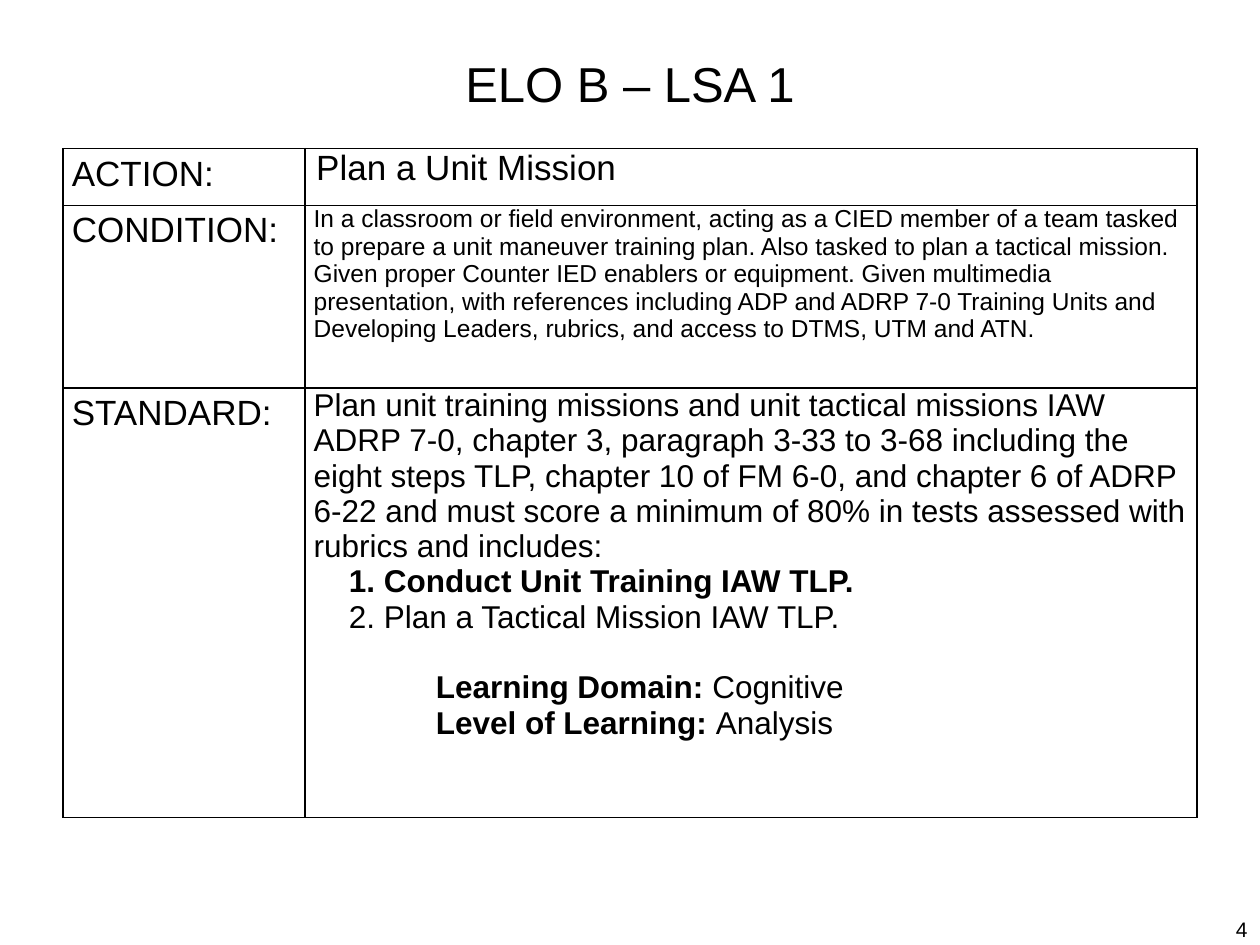
import pptx
import pptx.dml.color
import pptx.enum.text
import pptx.oxml
import pptx.oxml.ns
import pptx.util

Inches = pptx.util.Inches
Pt = pptx.util.Pt
ALIGN = pptx.enum.text.PP_ALIGN
MIDDLE = pptx.enum.text.MSO_ANCHOR.MIDDLE
BLACK = pptx.dml.color.RGBColor(0, 0, 0)
EDGE = (
    '<a:{} {} w="12700"><a:solidFill><a:srgbClr val="{}"/></a:solidFill></a:{}>'
)


def put(item, form):
    for key, value in form.items():
        setattr(item, key, value)


def write(para, runs, size, indent=0):
    if indent:
        para._p.get_or_add_pPr().set("marL", str(Inches(indent)))
    for text, bold in runs:
        run = para.add_run()
        run.text = text
        put(run.font, {"name": "Arial", "size": Pt(size), "bold": bold})
        run.font.color.rgb = BLACK


deck = pptx.Presentation()
put(deck, {"slide_width": Inches(10), "slide_height": Inches(7.5)})
slide = deck.slides.add_slide(deck.slide_layouts[5])

title = slide.shapes.title
put(title, {"left": Inches(0.5), "top": Inches(0.3),
            "width": Inches(9), "height": Inches(0.72)})
title.text_frame.vertical_anchor = MIDDLE
head = title.text_frame.paragraphs[0]
head.alignment = ALIGN.CENTER
write(head, [("ELO B – LSA 1", False)], 28)

page = slide.shapes.add_textbox(
    Inches(7.67), Inches(7.25), Inches(2.33), Inches(0.25)).text_frame
put(page, {"word_wrap": True, "vertical_anchor": MIDDLE})
page.paragraphs[0].alignment = ALIGN.RIGHT
write(page.paragraphs[0], [("4", False)], 12)

condition = (
    "In a classroom or field environment, acting as a CIED member of a team "
    "tasked to prepare a unit maneuver training plan. Also tasked to plan a "
    "tactical mission. Given proper Counter IED enablers or equipment. Given "
    "multimedia presentation, with references including ADP and ADRP 7-0 "
    "Training Units and Developing Leaders, rubrics, and access to DTMS, UTM "
    "and ATN."
)
standard = (
    "Plan unit training missions and unit tactical missions IAW ADRP 7-0, "
    "chapter 3, paragraph 3-33 to 3-68 including the eight steps TLP, chapter "
    "10 of FM 6-0, and chapter 6 of ADRP 6-22 and must score a minimum of 80% "
    "in tests assessed with rubrics and includes:"
)
rows = [
    ("ACTION:", 0.45, 20, [(0.02, 0, [("Plan a Unit Mission", False)])]),
    ("CONDITION:", 1.45, 14, [(0, 0, [(condition, False)])]),
    ("STANDARD:", 3.41, 18, [
        (0, 0, [(standard, False)]),
        (0.28, 0, [("1. Conduct Unit Training IAW TLP.", True)]),
        (0.28, 0, [("2. Plan a Tactical Mission IAW TLP.", False)]),
        (0.97, 20.2, [("Learning Domain: ", True), ("Cognitive", False)]),
        (0.97, 0, [("Level of Learning: ", True), ("Analysis", False)]),
    ]),
]

table = slide.shapes.add_table(
    len(rows), 2, Inches(0.5), Inches(1.18), Inches(9), Inches(5.31)).table
put(table, {"first_row": False, "horz_banding": False})
for column, width in zip(table.columns, (1.92, 7.08)):
    column.width = Inches(width)

for index, (label, height, size, lines) in enumerate(rows):
    table.rows[index].height = Inches(height)
    left, right = table.rows[index].cells
    for cell in (left, right):
        put(cell, {"margin_left": Inches(0.07), "margin_right": Inches(0.07),
                   "margin_top": 0, "margin_bottom": 0})
        for side in ("lnL", "lnR", "lnT", "lnB"):
            cell._tc.get_or_add_tcPr().append(pptx.oxml.parse_xml(
                EDGE.format(side, pptx.oxml.ns.nsdecls("a"), BLACK, side)))
        cell.fill.background()
    name = left.text_frame.paragraphs[0]
    name.line_spacing = 1.15
    write(name, [(label, False)], 20)
    frame = right.text_frame
    for order, (indent, space, runs) in enumerate(lines):
        para = frame.add_paragraph() if order else frame.paragraphs[0]
        if space:
            para.space_before = Pt(space)
        write(para, runs, size, indent)

deck.save("out.pptx")
